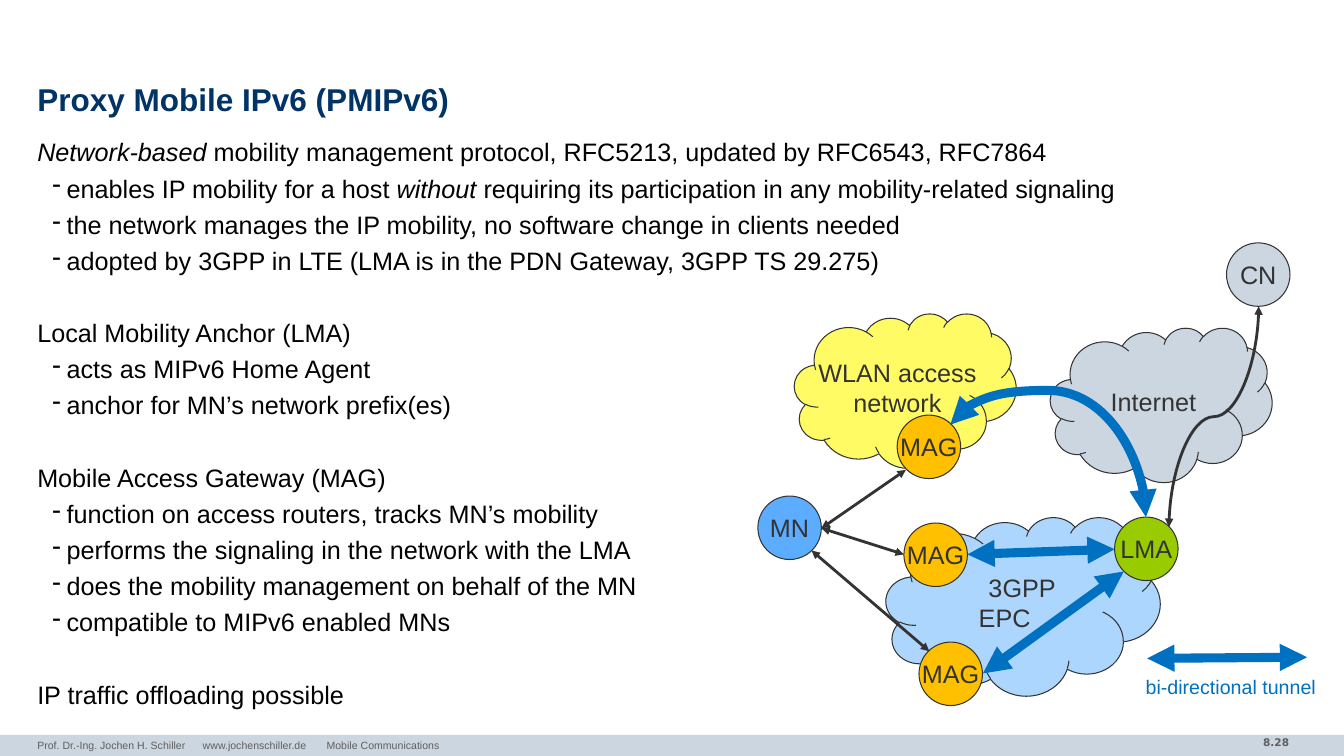
from lxml.etree import SubElement
from pptx import Presentation
from pptx.dml.color import RGBColor
from pptx.enum.shapes import MSO_CONNECTOR as Link, MSO_SHAPE as Kind
from pptx.enum.text import MSO_ANCHOR as Anchor, PP_ALIGN as Align
from pptx.oxml.ns import qn
from pptx.util import Cm, Pt

INK, BLUE, GRAY, PALE, AMBER = "333333", "0070C0", "5F5F5F", "CCD6E0", "FFC000"
SIZE = 1.6  # diameter of a network node

BODY = [
    ("*Network-based* mobility management protocol, RFC5213, updated by RFC6543, RFC7864", [
        "enables IP mobility for a host *without* requiring its participation in any mobility-related signaling",
        "the network manages the IP mobility, no software change in clients needed",
        "adopted by 3GPP in LTE (LMA is in the PDN Gateway, 3GPP TS 29.275)"]),
    ("Local Mobility Anchor (LMA)", [
        "acts as MIPv6 Home Agent",
        "anchor for MN’s network prefix(es)"]),
    ("Mobile Access Gateway (MAG)", [
        "function on access routers, tracks MN’s mobility",
        "performs the signaling in the network with the LMA",
        "does the mobility management on behalf of the MN",
        "compatible to MIPv6 enabled MNs"]),
    ("IP traffic offloading possible", []),
]

NODES = [
    ("CN", 30.91, 6.12, PALE),
    ("MN", 19.1, 12.5, "5CADFF"),
    ("MAG", 22.61, 10.46, AMBER),
    ("LMA", 28.09, 13.03, "99CC00"),
    ("MAG", 23.16, 16.18, AMBER),
    ("MAG", 22.78, 13.18, AMBER),
]

RADIO = [  # mobile node to gateways
    (22.78, 13.97, 20.7, 13.31),
    (22.83, 11.84, 20.7, 13.31),
    (23.42, 16.41, 20.45, 13.87),
]
TUNNELS = [  # gateways to anchor, then the legend
    (24.38, 13.97, 28.09, 13.84),
    (24.77, 16.97, 28.32, 14.4),
    (28.91, 16.59, 32.94, 16.56),
]


def tint(code):
    return RGBColor.from_string(code)


class Board:
    font = "Arial"

    def __init__(self, slide):
        self.shapes = slide.shapes

    def style(self, para, size=18, color=INK, bold=None, name=None, **form):
        """Format a paragraph and every run in it."""
        for key, val in form.items():
            setattr(para, key, val)
        for run in para.runs:
            look = {"size": Pt(size), "bold": bold, "name": name or self.font}
            for key, val in look.items():
                setattr(run.font, key, val)
            run.font.color.rgb = tint(color)

    def shape(self, kind, x, y, w, h, fill, line=None):
        item = self.shapes.add_shape(kind, Cm(x), Cm(y), Cm(w), Cm(h))
        item.shadow.inherit = False
        item.fill.solid()
        item.fill.fore_color.rgb = tint(fill)
        if line:
            item.line.color.rgb = tint(line)
            item.line.width = Pt(0.75)
        else:
            item.line.fill.background()
        return item

    def label(self, item, *lines, shift=0):
        """Centre lines in a shape; shift spreads the first right, the rest left."""
        frame = item.text_frame
        frame.word_wrap = bool(shift)
        frame.vertical_anchor = Anchor.MIDDLE
        for i, line in enumerate(lines):
            para = frame.paragraphs[0] if i == 0 else frame.add_paragraph()
            para.add_run().text = line
            self.style(para, alignment=Align.CENTER)
            if shift:
                para._p.get_or_add_pPr().set("marR" if i else "marL", str(Cm(shift)))

    def node(self, text, x, y, fill):
        self.label(self.shape(Kind.OVAL, x, y, SIZE, SIZE, fill, INK), text)

    def cloud(self, x, y, w, h, fill, *lines, shift=0):
        self.label(self.shape(Kind.CLOUD, x, y, w, h, fill, INK), *lines, shift=shift)

    def box(self, x, y, w, h, pad=(0, 0), anchor=Anchor.TOP, wrap=True):
        frame = self.shapes.add_textbox(Cm(x), Cm(y), Cm(w), Cm(h)).text_frame
        look = {"word_wrap": wrap, "vertical_anchor": anchor,
                "margin_left": Cm(pad[0]), "margin_right": Cm(pad[0]),
                "margin_top": Cm(pad[1]), "margin_bottom": Cm(pad[1])}
        for key, val in look.items():
            setattr(frame, key, val)
        return frame

    def text(self, text, x, y, w, h, pad=(0, 0), anchor=Anchor.TOP, wrap=True, tabs=(), **form):
        para = self.box(x, y, w, h, pad, anchor, wrap).paragraphs[0]
        if tabs:
            stops = SubElement(para._p.get_or_add_pPr(), qn("a:tabLst"))
            for pos in tabs:
                SubElement(stops, qn("a:tab"), pos=str(Cm(pos)), algn="l")
        for i, part in enumerate(text.split("\t")):
            para.add_run().text = "\t" + part if i else part
        self.style(para, **form)

    def body(self, topics, *place):
        """Topics with dashed points; *stars* mark italics."""
        frame = self.box(*place)
        for i, (head, points) in enumerate(topics):
            for j, line in enumerate([head, *points]):
                first = i == j == 0
                para = frame.paragraphs[0] if first else frame.add_paragraph()
                if j:
                    props = para._p.get_or_add_pPr()
                    props.set("marL", str(Cm(0.74)))
                    props.set("indent", str(Cm(-0.36)))
                    SubElement(props, qn("a:buChar"), char="-")
                for k, part in enumerate(line.split("*")):
                    if part:
                        run = para.add_run()
                        run.text = part
                        run.font.italic = k % 2 == 1
                gap = 0 if first else 3.8 if j else 29.6
                self.style(para, color="000000", line_spacing=1.02, space_before=Pt(gap))

    def arrow(self, x1, y1, x2, y2, color=INK, width=2, turn=None, bend=0.5):
        """Two-headed arrow; with a turn in degrees it is a curve."""
        kind = Link.STRAIGHT if turn is None else Link.CURVE
        item = self.shapes.add_connector(kind, Cm(x1), Cm(y1), Cm(x2), Cm(y2))
        item.line.color.rgb = tint(color)
        item.line.width = Pt(width)
        props = item._element.spPr
        if turn is not None:
            props.find(qn("a:xfrm")).set("rot", str(turn * 60000))
            geom = props.find(qn("a:prstGeom"))
            guides = geom.find(qn("a:avLst"))
            if guides is None:
                guides = SubElement(geom, qn("a:avLst"))
            SubElement(guides, qn("a:gd"), name="adj1", fmla=f"val {round(bend * 100000)}")
        for end in ("a:headEnd", "a:tailEnd"):
            SubElement(props.find(qn("a:ln")), qn(end), type="triangle")
        SubElement(props, qn("a:effectLst"))


def main():
    deck = Presentation()
    deck.slide_width, deck.slide_height = Cm(33.87), Cm(19.05)
    board = Board(deck.slides.add_slide(deck.slide_layouts[6]))

    board.shape(Kind.RECTANGLE, 0, 18.52, 33.87, 0.53, PALE)
    board.text("8.28", 28.19, 18.42, 4.55, 0.66, pad=(0.25, 0.13), size=7.5, color=GRAY,
               bold=True, name="DejaVu Sans", alignment=Align.RIGHT)
    board.text("Prof. Dr.-Ing. Jochen H. Schiller\twww.jochenschiller.de\tMobile Communications",
               0.94, 18.49, 22.15, 0.56, pad=(0, 0.13), tabs=(4.17, 7.29), size=7.5, color=GRAY)
    board.text("Proxy Mobile IPv6 (PMIPv6)", 0.94, 1.98, 32, 1.19, anchor=Anchor.MIDDLE,
               size=22.5, color="003366", bold=True, line_spacing=0.85)
    board.body(BODY, 0.94, 3.43, 32, 14.58)

    board.cloud(20.02, 7.9, 5.59, 3.89, "FFFB65", "WLAN access", "network")
    board.cloud(26.47, 8.26, 5.59, 3.89, PALE, "Internet")
    board.cloud(22.33, 13.03, 6.91, 4.5, "ADD6FF", "3GPP", "EPC", shift=0.44)
    for node in NODES:
        board.node(*node)

    for ends in RADIO:
        board.arrow(*ends)
    board.arrow(27.81, 9.37, 33.37, 11.63, turn=90)
    for ends in TUNNELS:
        board.arrow(*ends, color=BLUE, width=6.5)
    board.arrow(27.58, 9.4, 25.25, 14.33, color=BLUE, width=6.5, turn=270, bend=-0.37)
    board.text("bi-directional tunnel", 28.58, 16.87, 4.88, 0.86, pad=(0.25, 0.13), wrap=False,
               size=14, color=BLUE, alignment=Align.CENTER)
    deck.save("out.pptx")


if __name__ == "__main__":
    main()
